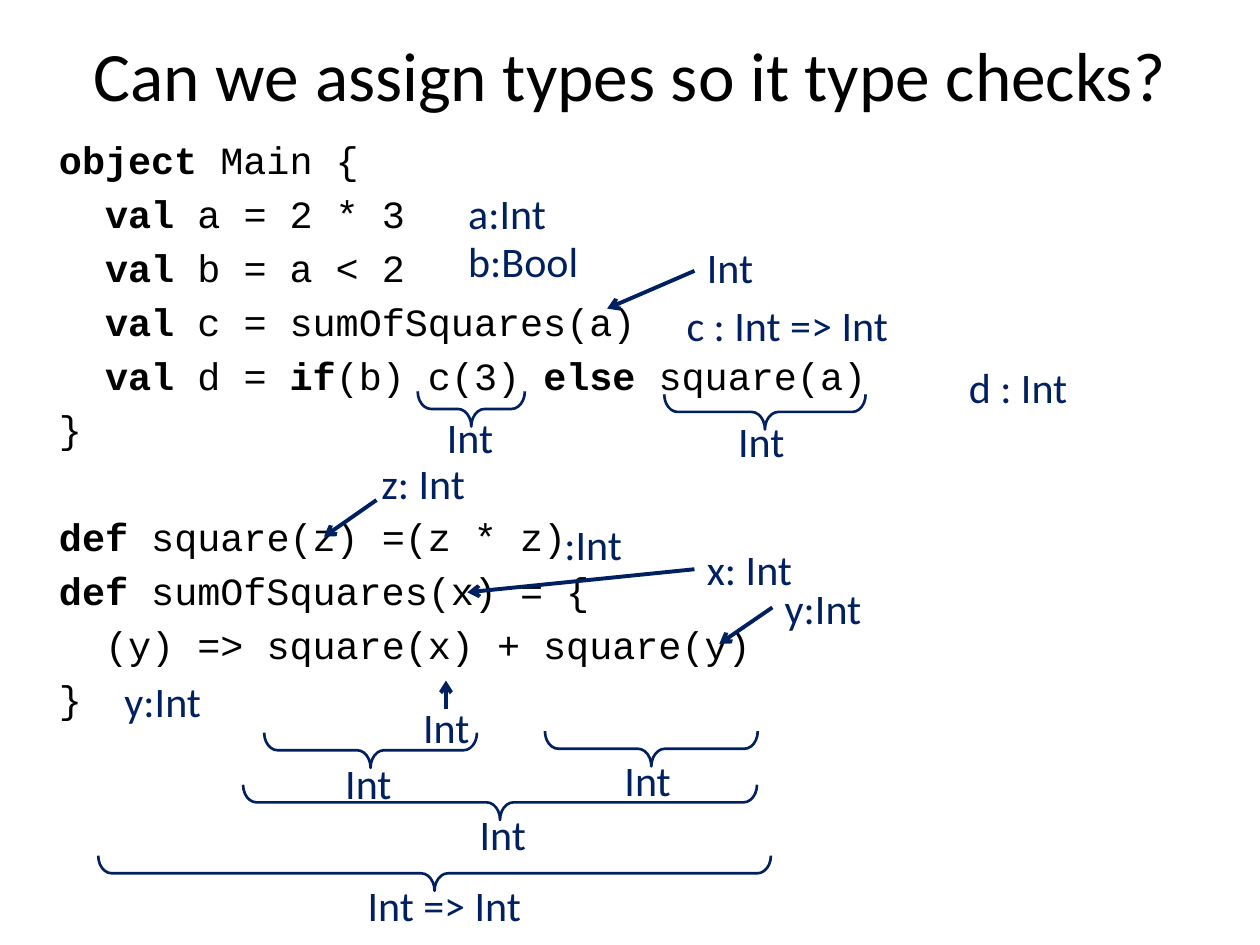
from dataclasses import dataclass
from typing import Optional

from lxml import etree
from pptx import Presentation
from pptx import util as u
from pptx.dml.color import RGBColor
from pptx.enum import shapes, text
from pptx.oxml import ns

NAVY = "002060"
BLACK = "000000"
LABEL_HEIGHT = 1.27
BRACE_DEPTH = 0.71
CODE_INDENT = 26.4  # two characters of 22 pt Courier New
LINE_GAP = 4.4  # a fifth of the text size
BLOCK_GAP = 35.25  # one empty line and two line gaps
Point = tuple[float, float]


@dataclass
class Label:
    """A type note; positions are in centimetres."""
    wording: str
    left: float
    top: float
    width: float
    points_at: Optional[Point] = None
    arrow_start: Optional[Point] = None  # default: middle of the left side


@dataclass
class Brace:
    """A brace opening upwards over a label."""
    center: float
    top: float
    width: float
    label: Label


@dataclass
class CodeLine:
    """Runs alternate between plain and bold, starting with plain."""
    runs: list[str]
    indented: bool = False
    gap: float = LINE_GAP


TITLE = "Can we assign types so it type checks?"

CODE = [
    CodeLine(["", "object", " Main {"]),
    CodeLine(["", "val", " a = 2 * 3"], True),
    CodeLine(["", "val", " b = a < 2"], True),
    CodeLine(["", "val", " c = sumOfSquares(a)"], True),
    CodeLine(["", "val", " d = ", "if", "(b) c(3) ", "else", " square(a)"], True),
    CodeLine(["}"]),
    CodeLine(["", "def ", "square(z) =(z * z)"], gap=BLOCK_GAP),
    CodeLine(["", "def", " sumOfSquares(x) = {"]),
    CodeLine(["(y) => square(x) + square(y)"], True),
    CodeLine(["}"]),
]

LABELS = [
    Label("a:Int", 9.19, 3.66, 2.39),
    Label("b:Bool", 9.19, 4.62, 4.8),
    Label("Int", 14, 4.74, 2.62, (12.24, 6.22), (14, 5.46)),
    Label("x: Int", 14, 10.84, 2.62, (9.42, 11.94)),
    Label("Int", 8.28, 14.02, 1.6, (8.99, 13.72), (8.99, 14.3)),
    Label("z: Int", 7.44, 9.09, 2.62, (6.53, 10.82), (7.59, 10.08)),
    Label(":Int", 11.13, 10.32, 2.39),
    Label("y:Int", 15.57, 11.61, 2.11, (14.5, 12.98)),
    Label("y:Int", 2.26, 13.49, 2.11),
    Label("c : Int => Int", 13.59, 5.92, 5.11),
    Label("d : Int", 19.28, 7.16, 3.23),
]

BRACES = [
    Brace(7.47, 14.77, 4.29, Label("Int", 6.71, 15.14, 1.6)),
    Brace(13.13, 14.74, 4.29, Label("Int", 12.34, 15.09, 1.6)),
    Brace(10.08, 15.82, 10.36, Label("Int", 9.42, 16.18, 1.65)),
    Brace(8.76, 17.25, 13.56, Label("Int => Int", 7.16, 17.6, 4.04)),
    Brace(9.5, 7.89, 2.16, Label("Int", 8.76, 8.18, 1.47)),
    Brace(15.42, 7.95, 4.06, Label("Int", 14.63, 8.26, 1.52)),
]


def color(hex_value: str) -> RGBColor:
    return RGBColor.from_string(hex_value)


def add_run(paragraph, wording: str, hex_value: str, **font_format) -> None:
    run = paragraph.add_run()
    run.text = wording
    for name, value in font_format.items():
        setattr(run.font, name, value)
    run.font.color.rgb = color(hex_value)


def add_text_box(slide, left: float, top: float, width: float, height: float):
    shape = slide.shapes.add_textbox(u.Cm(left), u.Cm(top), u.Cm(width), u.Cm(height))
    shape.text_frame.word_wrap = True
    return shape


def write_title(slide) -> None:
    title = slide.shapes.title
    position = {"left": 1.27, "top": 0.34, "width": 22.86, "height": 2.29}
    for name, value in position.items():
        setattr(title, name, u.Cm(value))
    title.text_frame.vertical_anchor = text.MSO_ANCHOR.MIDDLE
    paragraph = title.text_frame.paragraphs[0]
    paragraph.alignment = text.PP_ALIGN.CENTER
    add_run(paragraph, TITLE, BLACK, name="Calibri", size=u.Pt(39.6))


def add_code(slide, lines: list[CodeLine]) -> None:
    frame = add_text_box(slide, 0.94, 2.62, 23.67, 14.91).text_frame
    for index, line in enumerate(lines):
        paragraph = frame.add_paragraph() if index else frame.paragraphs[0]
        paragraph.space_before = u.Pt(line.gap)
        if line.indented:
            paragraph._p.get_or_add_pPr().set("marL", str(u.Pt(CODE_INDENT)))
        for position, wording in enumerate(line.runs):
            if wording:
                add_run(paragraph, wording, BLACK, name="Courier New",
                        size=u.Pt(22), bold=position % 2 == 1)


def add_arrow(slide, start: Point, end: Point):
    arrow = slide.shapes.add_connector(
        shapes.MSO_CONNECTOR.STRAIGHT, *(u.Cm(value) for value in start + end))
    arrow.line.color.rgb = color(NAVY)
    arrow.line.width = u.Pt(2.25)
    etree.SubElement(arrow.line._get_or_add_ln(), ns.qn("a:tailEnd"), type="arrow")
    etree.SubElement(arrow._element.spPr, ns.qn("a:effectLst"))
    return arrow


def add_label(slide, label: Label) -> None:
    """Write the note and, where it points at something, its arrow."""
    box = add_text_box(slide, label.left, label.top, label.width, LABEL_HEIGHT)
    add_run(box.text_frame.paragraphs[0], label.wording, NAVY,
            name="Calibri", size=u.Pt(24))
    if label.points_at:
        side_middle = (label.left, label.top + LABEL_HEIGHT / 2)
        arrow = add_arrow(slide, label.arrow_start or side_middle, label.points_at)
        if not label.arrow_start:
            arrow.begin_connect(box, 1)


def add_brace(slide, brace: Brace) -> None:
    """Turn a right brace a quarter round its centre, then add its label."""
    middle = brace.top + BRACE_DEPTH / 2
    shape = slide.shapes.add_shape(
        shapes.MSO_SHAPE.RIGHT_BRACE,
        u.Cm(brace.center - BRACE_DEPTH / 2), u.Cm(middle - brace.width / 2),
        u.Cm(BRACE_DEPTH), u.Cm(brace.width))
    shape.rotation = 90
    shape.adjustments[0] = 0.38
    shape.shadow.inherit = False
    shape.fill.background()
    shape.line.color.rgb = color(NAVY)
    shape.line.width = u.Pt(1.5)
    add_label(slide, brace.label)


def main() -> None:
    presentation = Presentation()
    presentation.slide_width = u.Cm(25.4)
    presentation.slide_height = u.Cm(19.05)
    slide = presentation.slides.add_slide(presentation.slide_layouts[5])
    write_title(slide)
    add_code(slide, CODE)
    for label in LABELS:
        add_label(slide, label)
    for brace in BRACES:
        add_brace(slide, brace)
    presentation.save("out.pptx")


if __name__ == "__main__":
    main()
